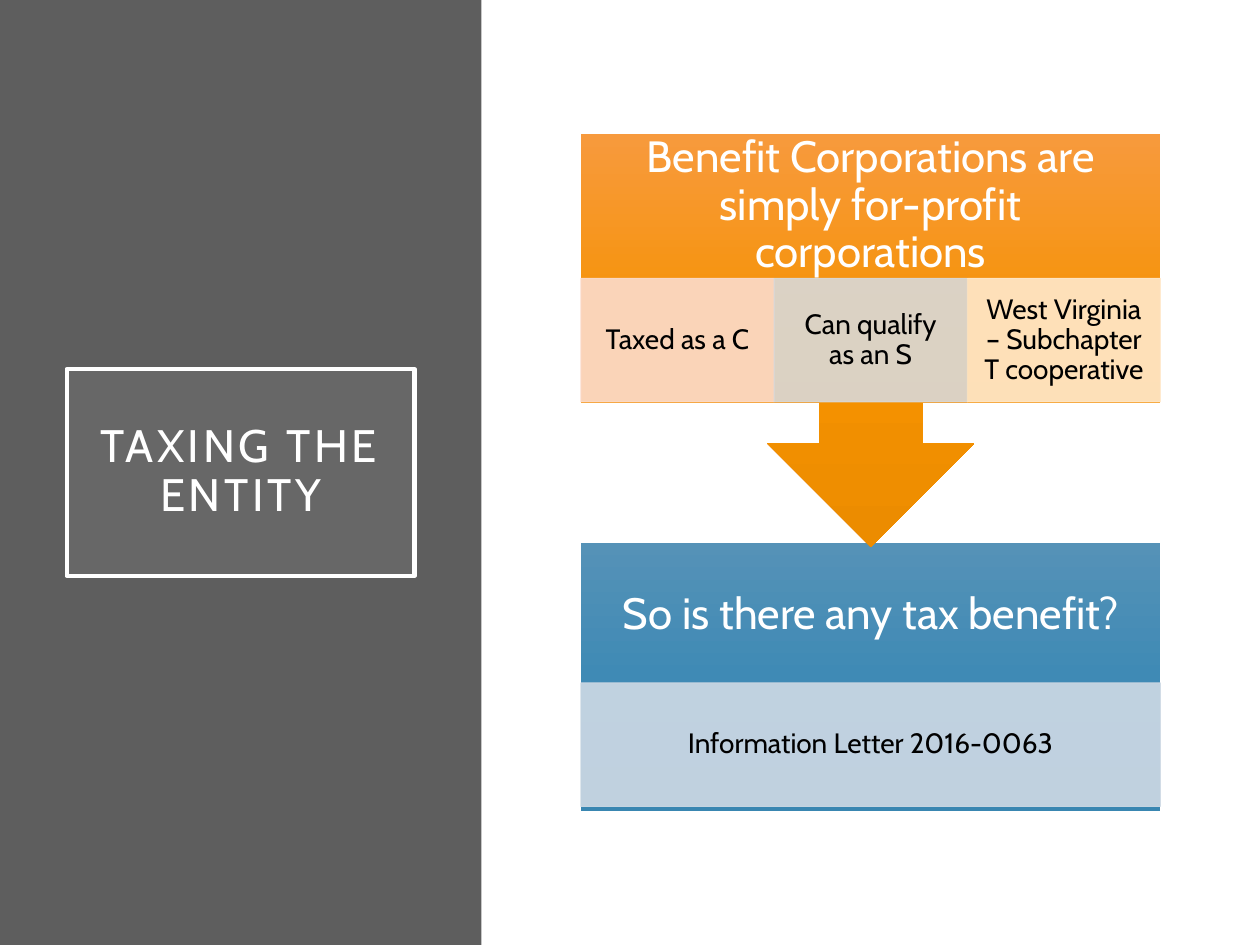
import lxml.etree
import pptx
import pptx.dml.color
import pptx.enum.shapes
import pptx.enum.text
import pptx.oxml
import pptx.oxml.ns
import pptx.util

Inches = pptx.util.Inches
Pt = pptx.util.Pt
SHAPE = pptx.enum.shapes.MSO_SHAPE
qn = pptx.oxml.ns.qn
FONT = "Cabin"


def color(code):
    return pptx.dml.color.RGBColor.from_string(code)


def fade(fill, alpha):
    """Set the opacity, in percent, of a solid fill."""
    tint = fill.fore_color._xFill.find(qn("a:srgbClr"))
    lxml.etree.SubElement(tint, qn("a:alpha")).set("val", str(alpha * 1000))


def shade(shape, codes):
    """Fill from top to bottom with evenly spaced colours, whatever the rotation."""
    shape.fill.gradient()
    grad = shape._element.spPr.find(qn("a:gradFill"))
    grad.set("rotWithShape", "0")
    stops = grad.find(qn("a:gsLst"))
    for stop in list(stops):
        stops.remove(stop)
    for i, code in enumerate(codes):
        stop = lxml.etree.SubElement(stops, qn("a:gs"))
        stop.set("pos", str(i * 100000 // (len(codes) - 1)))
        lxml.etree.SubElement(stop, qn("a:srgbClr")).set("val", code)
    grad.find(qn("a:lin")).set("ang", "5400000")


def add_shape(slide, box, kind=SHAPE.RECTANGLE):
    shape = slide.shapes.add_shape(kind, *map(Inches, box))
    shape.shadow.inherit = False
    shape.line.fill.background()
    return shape


def add_fill(shape, code, alpha=100):
    shape.fill.solid()
    shape.fill.fore_color.rgb = color(code)
    if alpha < 100:
        fade(shape.fill, alpha)


def add_line(shape, code, width, alpha=100):
    shape.line.color.rgb = color(code)
    shape.line.width = Pt(width)
    if alpha < 100:
        fade(shape.line.fill, alpha)


def write(shape, text, size, code, pad_x, pad_y, track=0):
    frame = shape.text_frame
    frame.word_wrap = True
    frame.vertical_anchor = pptx.enum.text.MSO_ANCHOR.MIDDLE
    frame.margin_left = frame.margin_right = Inches(pad_x)
    frame.margin_top = frame.margin_bottom = Inches(pad_y)
    para = frame.paragraphs[0]
    para.alignment = pptx.enum.text.PP_ALIGN.CENTER
    para.line_spacing = 0.9
    run = para.add_run()
    run.text = text
    run.font.name = FONT
    run.font.size = Pt(size)
    run.font.color.rgb = color(code)
    if track:
        run._r.get_or_add_rPr().set("spc", str(track * 100))


def add_title(slide, box, text):
    left, top, width, height = box
    add_fill(add_shape(slide, box), "5E5E5E")
    frame = add_shape(slide, (left + 0.53, top + 2.93, 2.76, 1.64))
    add_fill(frame, "9E9E9E", 15)
    add_line(frame, "FFFFFF", 2.5)
    write(frame, text, 26, "FFFFFF", 0.2, 0.2, track=2)


def add_step(slide, box, kind, codes, head, cells, cell_top):
    """Draw a shaded block with a heading and a row of equal cells."""
    left, top, width, height = box
    block = add_shape(slide, box, kind)
    shade(block, codes)
    if kind == SHAPE.UP_ARROW_CALLOUT:
        block.rotation = 180
    label = slide.shapes.add_textbox(*map(Inches, (left, top, width, 1.15)))
    write(label, head, 25, "FFFFFF", 0.19, 0.19)
    step = width / len(cells)
    for i, (text, code) in enumerate(cells):
        cell = add_shape(slide, (left + i * step, top + cell_top, step, 0.98))
        add_fill(cell, code, 90)
        add_line(cell, code, 0.5, 90)
        write(cell, text, 16, "000000", 0.12, 0.02)


def add_flow(slide, box):
    left, top, width, height = box
    add_step(slide, (left, top + 3.25, width, height - 3.25), SHAPE.RECTANGLE,
             ("5592B7", "3F8AB5", "3986B1"), "So is there any tax benefit?",
             [("Information Letter 2016-0063", "CFDAE5")], 1.11)
    add_step(slide, (left, top, width, 3.28), SHAPE.UP_ARROW_CALLOUT,
             ("F79A3D", "F69200", "EC8C00"),
             "Benefit Corporations are simply for-profit corporations",
             [("Taxed as a C", "FBDCCC"),
              ("Can qualify as an S", "D9D9D9"),
              ("West Virginia – Subchapter T cooperative", "FFE9CC")], 1.15)


def main():
    deck = pptx.Presentation()
    deck.slide_width, deck.slide_height = Inches(10), Inches(7.5)
    slide = deck.slides.add_slide(deck.slide_layouts[6])
    add_title(slide, (0, 0, 3.82, 7.5), "TAXING THE ENTITY")
    add_flow(slide, (4.61, 1.06, 4.6, 5.38))
    deck.save("out.pptx")


if __name__ == "__main__":
    main()
